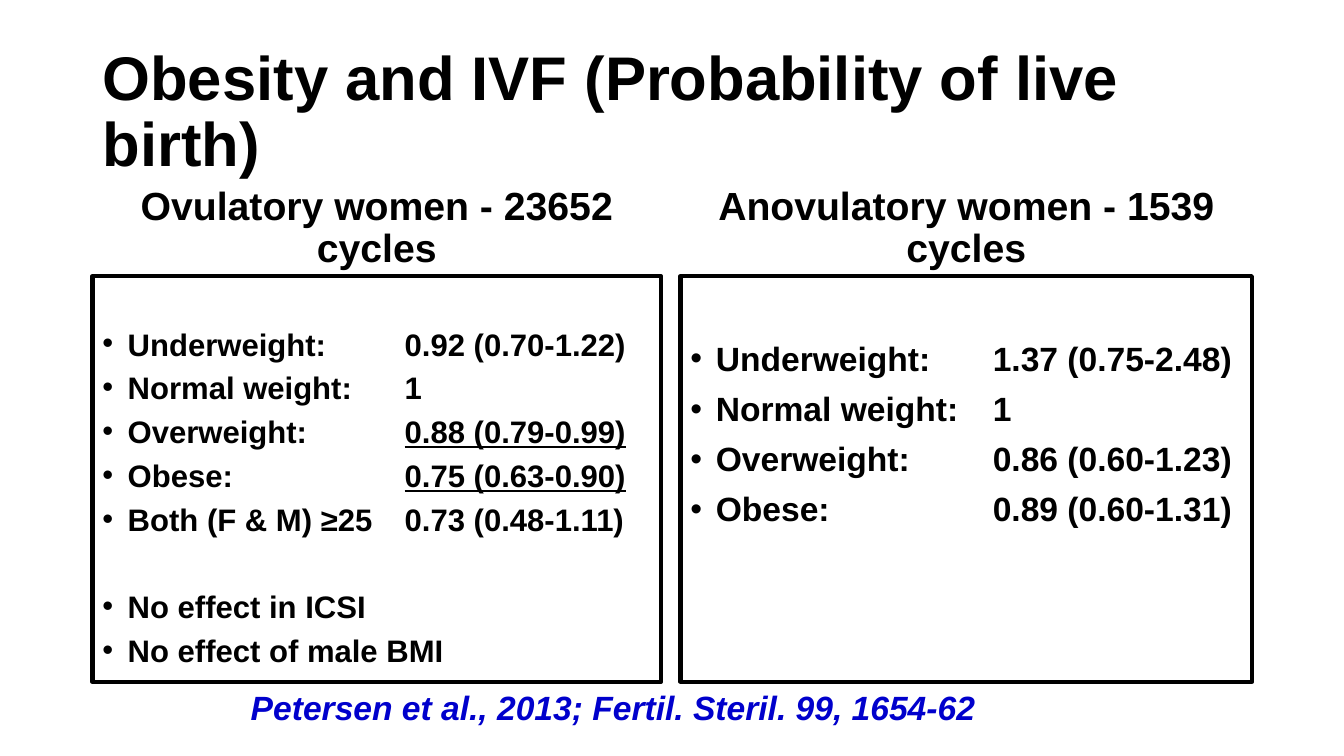
from pptx import Presentation
from pptx.dml.color import RGBColor
from pptx.enum.shapes import MSO_SHAPE
from pptx.enum.text import MSO_ANCHOR, PP_ALIGN
from pptx.oxml import parse_xml
from pptx.oxml.ns import nsdecls
from pptx.util import Cm, Pt

RECT = MSO_SHAPE.RECTANGLE
TOP, MIDDLE, BOTTOM = MSO_ANCHOR.TOP, MSO_ANCHOR.MIDDLE, MSO_ANCHOR.BOTTOM
LEFT, CENTER = PP_ALIGN.LEFT, PP_ALIGN.CENTER

# Content: rows are (label, value, underlined)
TITLE = "Obesity and IVF (Probability of live birth)"
CITE = "Petersen et al., 2013; Fertil. Steril. 99, 1654-62"
GROUPS = [
    {
        "head": "Ovulatory women - 23652 cycles",
        "rows": [
            ("Underweight:", "0.92 (0.70-1.22)", False),
            ("Normal weight:", "1", False),
            ("Overweight:", "0.88 (0.79-0.99)", True),
            ("Obese:", "0.75 (0.63-0.90)", True),
            ("Both (F & M) ≥25", "0.73 (0.48-1.11)", False),
        ],
        "notes": ["No effect in ICSI", "No effect of male BMI"],
        "left": 2.33, "width": 14.33,
        "size": 22.2, "pitch": 0.8, "inset": 1.41,
    },
    {
        "head": "Anovulatory women - 1539 cycles",
        "rows": [
            ("Underweight:", "1.37 (0.75-2.48)", False),
            ("Normal weight:", "1", False),
            ("Overweight:", "0.86 (0.60-1.23)", False),
            ("Obese:", "0.89 (0.60-1.31)", False),
        ],
        "notes": [],
        "left": 17.15, "width": 14.4,
        "size": 24, "pitch": 0.9, "inset": 1.66,
    },
]

THEME = {
    "font": "Arial",
    "ink": RGBColor(0, 0, 0),
    "cite": RGBColor(0, 0, 0xCC),
    "title": 44, "head": 28, "note": 24,
    "gap": 10, "break": 41, "line": 3,
}
HEAD_TOP, BOX_TOP, BOX_END = 4.67, 6.96, 17.18
INDENT, TAB = Cm(0.64), Cm(7.62)


def style(para, size, color=THEME["ink"]):
    for run in para.runs:
        font = run.font
        font.name, font.size, font.bold = THEME["font"], Pt(size), True
        font.color.rgb = color


def bullet(para):
    props = para._p.get_or_add_pPr()
    props.set("marL", str(INDENT))
    props.set("indent", str(-INDENT))
    props.append(parse_xml(f'<a:buFont {nsdecls("a")} typeface="Arial"/>'))
    props.append(parse_xml(f'<a:buChar {nsdecls("a")} char="•"/>'))
    props.append(parse_xml(
        f'<a:tabLst {nsdecls("a")}><a:tab pos="{TAB}" algn="l"/></a:tabLst>'))


def add_head(slide, group):
    box = slide.shapes.add_textbox(
        Cm(group["left"]), Cm(HEAD_TOP),
        Cm(group["width"]), Cm(BOX_TOP - HEAD_TOP))
    frame = box.text_frame
    frame.word_wrap, frame.vertical_anchor = True, BOTTOM
    para = frame.paragraphs[0]
    para.text = group["head"]
    para.alignment, para.line_spacing = CENTER, 0.9
    style(para, THEME["head"])


def add_box(slide, group):
    box = slide.shapes.add_shape(
        RECT, Cm(group["left"]), Cm(BOX_TOP),
        Cm(group["width"]), Cm(BOX_END - BOX_TOP))
    box.shadow.inherit = False
    box.fill.background()
    box.line.color.rgb, box.line.width = THEME["ink"], Pt(THEME["line"])
    frame = box.text_frame
    frame.word_wrap, frame.vertical_anchor = True, TOP
    frame.margin_top = Cm(group["inset"])

    lines = group["rows"] + [(note, "", False) for note in group["notes"]]
    split = len(group["rows"])
    for i, (label, value, under) in enumerate(lines):
        para = frame.add_paragraph() if i else frame.paragraphs[0]
        para.text = f"{label}\t" if value else label
        if value:
            run = para.add_run()
            run.text = value
            run.font.underline = under
        para.alignment, para.line_spacing = LEFT, group["pitch"]
        if i:
            para.space_before = Pt(THEME["break" if i == split else "gap"])
        style(para, group["size"])
        bullet(para)


deck = Presentation()
deck.slide_width, deck.slide_height = Cm(33.87), Cm(19.05)
slide = deck.slides.add_slide(deck.slide_layouts[5])

# Title
title = slide.shapes.title
title.left, title.top, title.width, title.height = (
    Cm(2.33), Cm(1.02), Cm(29.21), Cm(3.68))
title.text_frame.text = TITLE
title.text_frame.vertical_anchor = MIDDLE
para = title.text_frame.paragraphs[0]
para.alignment, para.line_spacing = LEFT, 0.9
style(para, THEME["title"])

# Two groups of women
for group in GROUPS:
    add_head(slide, group)
    add_box(slide, group)

# Citation
cite = slide.shapes.add_textbox(Cm(6.07), Cm(17.18), Cm(18.95), Cm(1.28))
cite.text_frame.word_wrap = False
para = cite.text_frame.paragraphs[0]
para.text = CITE
style(para, THEME["note"], THEME["cite"])
para.runs[0].font.italic = True

deck.save("out.pptx")
